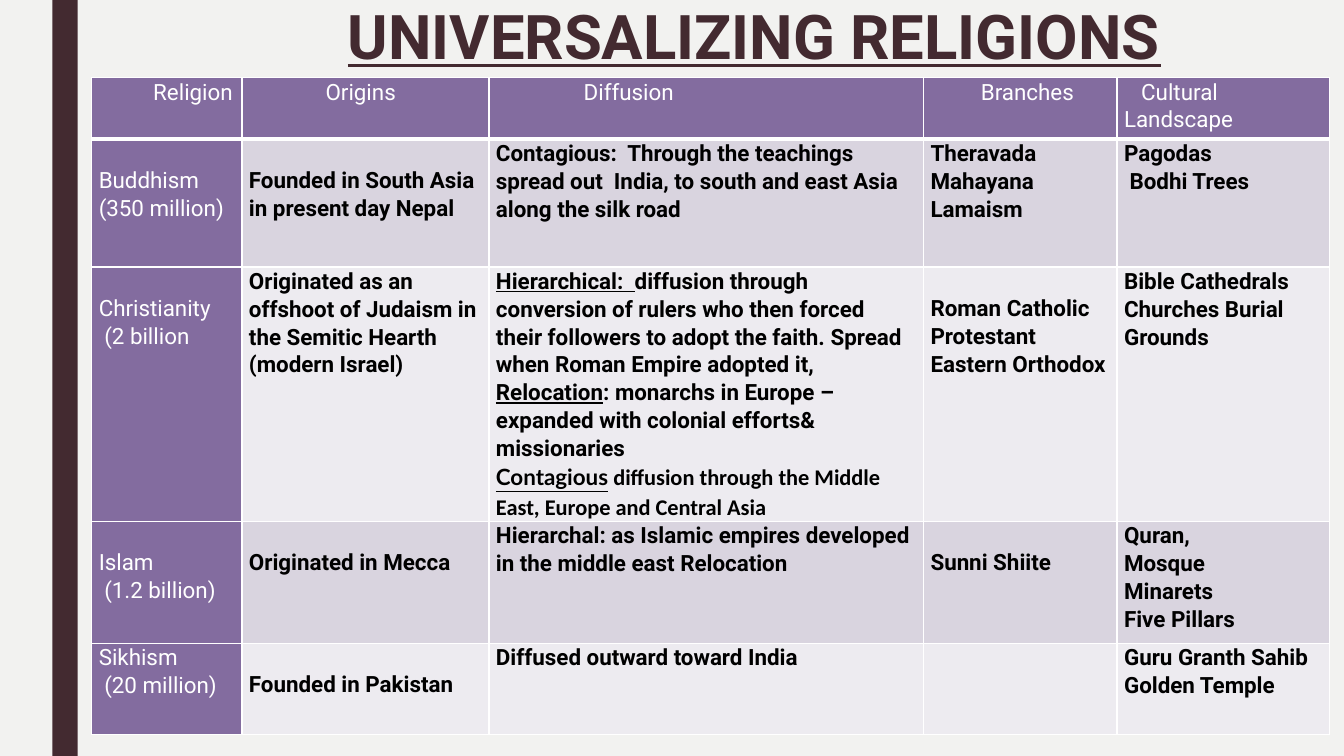
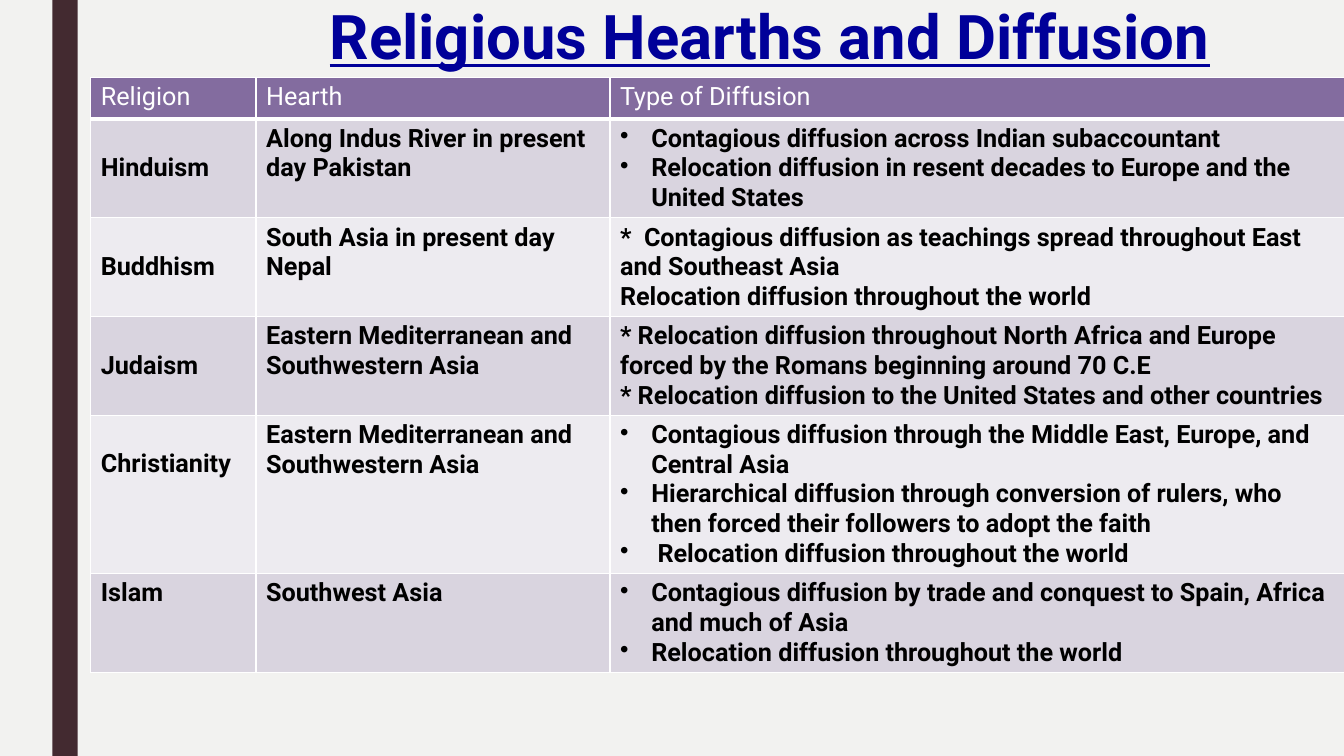
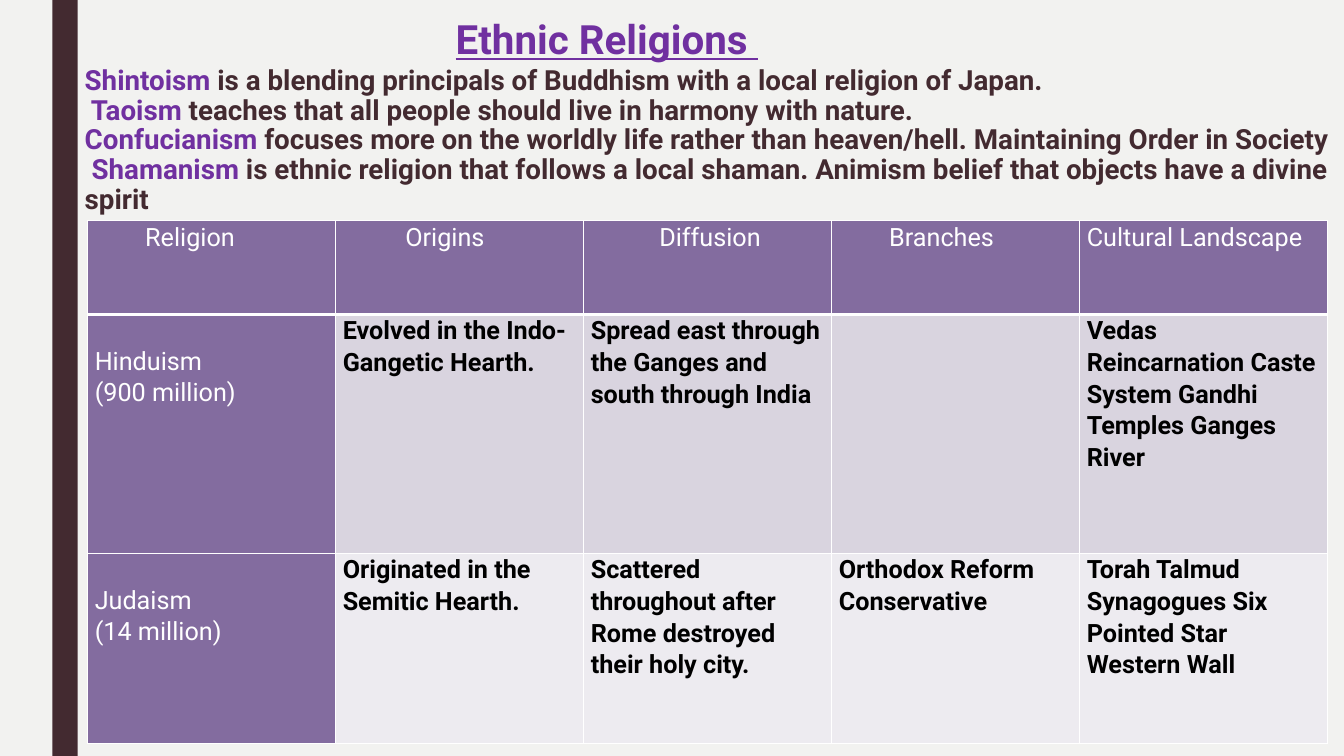
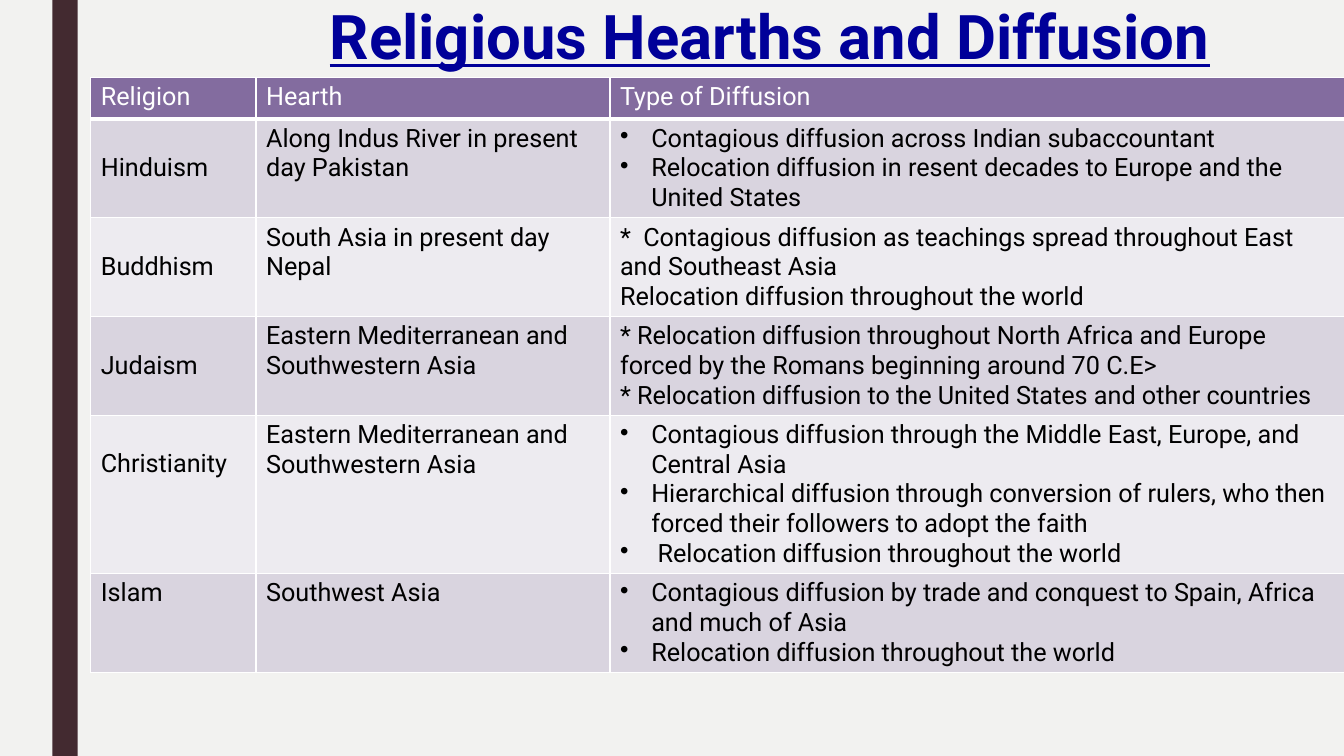
from dataclasses import dataclass

from lxml import etree
from pptx import Presentation
from pptx.dml.color import RGBColor
from pptx.enum.shapes import MSO_SHAPE
from pptx.enum.text import MSO_ANCHOR, MSO_AUTO_SIZE, PP_ALIGN
from pptx.oxml.ns import qn
from pptx.util import Inches, Pt

RECTANGLE = MSO_SHAPE.RECTANGLE
TOP = MSO_ANCHOR.TOP
LEFT = PP_ALIGN.LEFT
NO_AUTOFIT = MSO_AUTO_SIZE.NONE

SLIDE_W, SLIDE_H = 13.33, 7.5
FONT = "Roboto"
PAPER, PLUM, WHITE, BLACK = "F2F2F0", "432A30", "FFFFFF", "000000"
HEADER, STRIPES = "836C9F", ("D9D4DF", "EDEBF0")
NAVY, VIOLET = "000099", "7030A0"
BULLET = "• "
HANGING = 0.31
UNDERLINED = {"underline": True}


@dataclass
class Cell:
    paragraphs: tuple
    lead: float = 0
    dropped: bool = False


@dataclass
class TableStyle:
    size: float
    spacing: float
    margins: tuple
    drop: float
    bold: bool = True
    side_header: bool = True


def cell(*paragraphs, lead=0, dropped=False):
    return Cell(paragraphs, lead, dropped)


def rgb(value):
    return RGBColor.from_string(value)


def fill_with(item, color):
    item.fill.solid()
    item.fill.fore_color.rgb = rgb(color)


def format_font(font, name, size, color, bold, underline):
    font.name = name
    font.size = Pt(size)
    font.bold = bold
    font.underline = underline
    font.color.rgb = rgb(color)


def set_indent(paragraph, left, first):
    properties = paragraph._p.get_or_add_pPr()
    properties.set("marL", str(Inches(left)))
    properties.set("indent", str(Inches(first)))
    return properties


def write_text(frame, paragraphs, size=18, color=BLACK, bold=False,
               underline=False, name=FONT, spacing=None, lead=0, second_gap=0):
    base = dict(name=name, size=size, color=color, bold=bold, underline=underline)
    frame.word_wrap = True
    for index, content in enumerate(paragraphs):
        paragraph = frame.paragraphs[0] if index == 0 else frame.add_paragraph()
        runs = [content] if isinstance(content, str) else content
        if isinstance(content, str) and content.startswith(BULLET):
            runs = [content[len(BULLET):]]
            properties = set_indent(paragraph, HANGING, -HANGING)
            etree.SubElement(properties, qn("a:buChar")).set("char", BULLET.strip())
        else:
            set_indent(paragraph, 0, lead if index == 0 else 0)
        paragraph.alignment = LEFT
        paragraph.space_before = Pt(second_gap if index == 1 else 0)
        if spacing:
            paragraph.line_spacing = spacing
        for item in runs:
            words, changes = (item, {}) if isinstance(item, str) else item
            run = paragraph.add_run()
            run.text = words
            format_font(run.font, **{**base, **changes})


def draw_borders(table_cell, widths):
    properties = table_cell._tc.get_or_add_tcPr()
    for index, (side, width) in enumerate(widths.items()):
        line = etree.Element(qn(f"a:{side}"), w=str(Pt(width)))
        solid = etree.SubElement(line, qn("a:solidFill"))
        etree.SubElement(solid, qn("a:srgbClr")).set("val", WHITE)
        properties.insert(index, line)


def add_title_slide(prs, box, paragraphs, inset=0.07, **text_format):
    slide = prs.slides.add_slide(prs.slide_layouts[5])
    title = slide.shapes.title
    title.left, title.top, title.width, title.height = map(Inches, box)
    frame = title.text_frame
    frame.auto_size = NO_AUTOFIT
    frame.vertical_anchor = TOP
    frame.margin_top = Inches(inset)
    write_text(frame, paragraphs, spacing=0.89, **text_format)
    return slide


def add_religion_table(slide, left, top, columns, heights, rows, style):
    table = slide.shapes.add_table(
        len(rows), len(columns), Inches(left), Inches(top),
        Inches(sum(columns)), Inches(sum(heights))).table
    for column, width in zip(table.columns, columns):
        column.width = Inches(width)
    for r, (row, height, entries) in enumerate(zip(table.rows, heights, rows)):
        row.height = Inches(height)
        for c, (table_cell, entry) in enumerate(zip(row.cells, entries)):
            heading = r == 0 or (c == 0 and style.side_header)
            side, edge = style.margins
            table_cell.margin_left = table_cell.margin_right = Inches(side)
            table_cell.margin_top = Inches(edge + style.drop * entry.dropped)
            table_cell.margin_bottom = Inches(edge)
            fill_with(table_cell, HEADER if heading else STRIPES[(r - 1) % 2])
            draw_borders(table_cell, dict(lnL=1, lnR=1, lnT=1, lnB=3 if r == 0 else 1))
            write_text(table_cell.text_frame, entry.paragraphs, size=style.size,
                       color=WHITE if heading else BLACK,
                       bold=style.bold and not heading,
                       spacing=style.spacing, lead=entry.lead)


def header_row(labels, leads):
    return [cell(label, lead=lead) for label, lead in zip(labels, leads)]


FIVE_LABELS = ("Religion", "Origins", "Diffusion", "Branches", "Cultural Landscape")


def universalizing_slide(prs):
    slide = add_title_slide(prs, (0.91, 0, 12.29, 0.96), ["UNIVERSALIZING RELIGIONS"],
                            size=44, color=PLUM, bold=True, underline=True, lead=2.44)
    rows = [
        header_row(FIVE_LABELS, (0.54, 0.76, 0.87, 0.5, 0.17)),
        [cell("Buddhism", "(350 million)", dropped=True),
         cell("Founded in South Asia in present day Nepal", dropped=True),
         cell("Contagious:  Through the teachings spread out  India, "
              "to south and east Asia along the silk road"),
         cell("Theravada", "Mahayana", "Lamaism"),
         cell("Pagodas", " Bodhi Trees")],
        [cell("Christianity", " (2 billion", dropped=True),
         cell("Originated as an offshoot of Judaism in the Semitic Hearth (modern Israel)"),
         cell([("Hierarchical:  ", UNDERLINED),
               "diffusion through conversion of rulers who then forced their followers "
               "to adopt the faith. Spread when Roman Empire adopted it,"],
              [("Relocation", UNDERLINED),
               ": monarchs in Europe – expanded with colonial efforts& missionaries"],
              [("Contagious", {"name": "Lato", "underline": True}),
               (" diffusion through the Middle East, Europe and Central Asia",
                {"name": "Calibri"})]),
         cell("Roman Catholic Protestant", "Eastern Orthodox", dropped=True),
         cell("Bible Cathedrals Churches Burial Grounds")],
        [cell("Islam", " (1.2 billion)", dropped=True),
         cell("Originated in Mecca", dropped=True),
         cell("Hierarchal: as Islamic empires developed in the middle east Relocation"),
         cell("Sunni Shiite", dropped=True),
         cell("Quran,", "Mosque", "Minarets", "Five Pillars")],
        [cell("Sikhism", " (20 million)"),
         cell("Founded in Pakistan", dropped=True),
         cell("Diffused outward toward India"),
         cell(),
         cell("Guru Granth Sahib Golden Temple")],
    ]
    add_religion_table(slide, 0.91, 0.77, (1.49, 2.45, 4.31, 1.92, 2.11),
                       (0.61, 1.27, 2.52, 1.21, 0.91), rows,
                       TableStyle(16, 1.07, (0.07, 0), 0.27))


def hearths_slide(prs, bold, era):
    slide = add_title_slide(prs, (0.9, 0, 12.43, 0.77), ["Religious Hearths and Diffusion"],
                            size=44, color=NAVY, bold=True, underline=True, lead=2.27)
    mediterranean = "Eastern Mediterranean and Southwestern Asia"
    worldwide = "Relocation diffusion throughout the world"
    rows = [
        header_row(("Religion", "Hearth", "Type of Diffusion"), (0, 0, 0)),
        [cell("Hinduism", dropped=True),
         cell("Along Indus River in present day Pakistan"),
         cell("• Contagious diffusion across Indian subaccountant",
              "• Relocation diffusion in resent decades to Europe and the United States")],
        [cell("Buddhism", dropped=True),
         cell("South Asia in present day Nepal"),
         cell("*  Contagious diffusion as teachings spread throughout East and Southeast Asia",
              worldwide)],
        [cell("Judaism", dropped=True),
         cell(mediterranean),
         cell("* Relocation diffusion throughout North Africa and Europe "
              f"forced by the Romans beginning around 70 {era}",
              "* Relocation diffusion to the United States and other countries")],
        [cell("Christianity", dropped=True),
         cell(mediterranean),
         cell("• Contagious diffusion through the Middle East, Europe, and Central Asia",
              "• Hierarchical diffusion through conversion of rulers, "
              "who then forced their followers to adopt the faith",
              f"{BULLET} {worldwide}")],
        [cell("Islam"),
         cell("Southwest Asia"),
         cell("• Contagious diffusion by trade and conquest to Spain, Africa and much of Asia",
              BULLET + worldwide)],
    ]
    add_religion_table(slide, 0.9, 0.77, (1.64, 3.51, 7.29),
                       (0.41, 0.98, 0.98, 0.98, 1.57, 0.98), rows,
                       TableStyle(18, None, (0.1, 0.05), 0.29, bold, side_header=False))


def ethnic_slide(prs):
    faith = {"color": VIOLET}
    heading = {"color": VIOLET, "size": 28.8, "underline": True}
    summary = [
        [("Ethnic Religions ", heading)],
        [("Shintoism", faith),
         " is a blending principals of Buddhism with a local religion of Japan."],
        [(" Taoism", faith),
         " teaches that all people should live in harmony with nature."],
        [("Confucianism", faith),
         " focuses more on the worldly life rather than heaven/hell. "
         "Maintaining Order in Society"],
        [(" Shamanism", faith),
         " is ethnic religion that follows a local shaman. "
         "Animism belief that objects have a divine spirit"],
    ]
    slide = add_title_slide(prs, (0.74, 0, 12.59, 2.19), summary, inset=0.2, size=19.8,
                            color=PLUM, bold=True, lead=3.68, second_gap=2.6)
    rows = [
        header_row(FIVE_LABELS, (0.5, 0.62, 0.68, 0.5, 0)),
        [cell("Hinduism", "(900 million)", dropped=True),
         cell("Evolved in the Indo-Gangetic Hearth."),
         cell("Spread east through the Ganges and south through India"),
         cell(),
         cell("Vedas Reincarnation Caste System Gandhi Temples Ganges River")],
        [cell("Judaism", "(14 million)", dropped=True),
         cell("Originated in the Semitic Hearth."),
         cell("Scattered throughout after Rome destroyed their holy city."),
         cell("Orthodox Reform Conservative"),
         cell("Torah Talmud Synagogues Six Pointed Star Western Wall")],
    ]
    add_religion_table(slide, 0.87, 2.19, (2.46,) * 5, (0.93, 2.37, 1.89), rows,
                       TableStyle(18, 1.07, (0.07, 0), 0.3))


def style_master(prs):
    fill_with(prs.slide_master.background, PAPER)
    band = prs.slides[0].shapes.add_shape(
        RECTANGLE, Inches(0.52), 0, Inches(0.25), Inches(SLIDE_H))
    band.shadow.inherit = False
    fill_with(band, PLUM)
    band.line.fill.background()
    prs.slide_master.shapes.element.append(band.element)


def main():
    prs = Presentation()
    prs.slide_width, prs.slide_height = Inches(SLIDE_W), Inches(SLIDE_H)
    universalizing_slide(prs)
    hearths_slide(prs, bold=True, era="C.E")
    ethnic_slide(prs)
    hearths_slide(prs, bold=False, era="C.E>")
    style_master(prs)
    prs.save("out.pptx")


if __name__ == "__main__":
    main()
